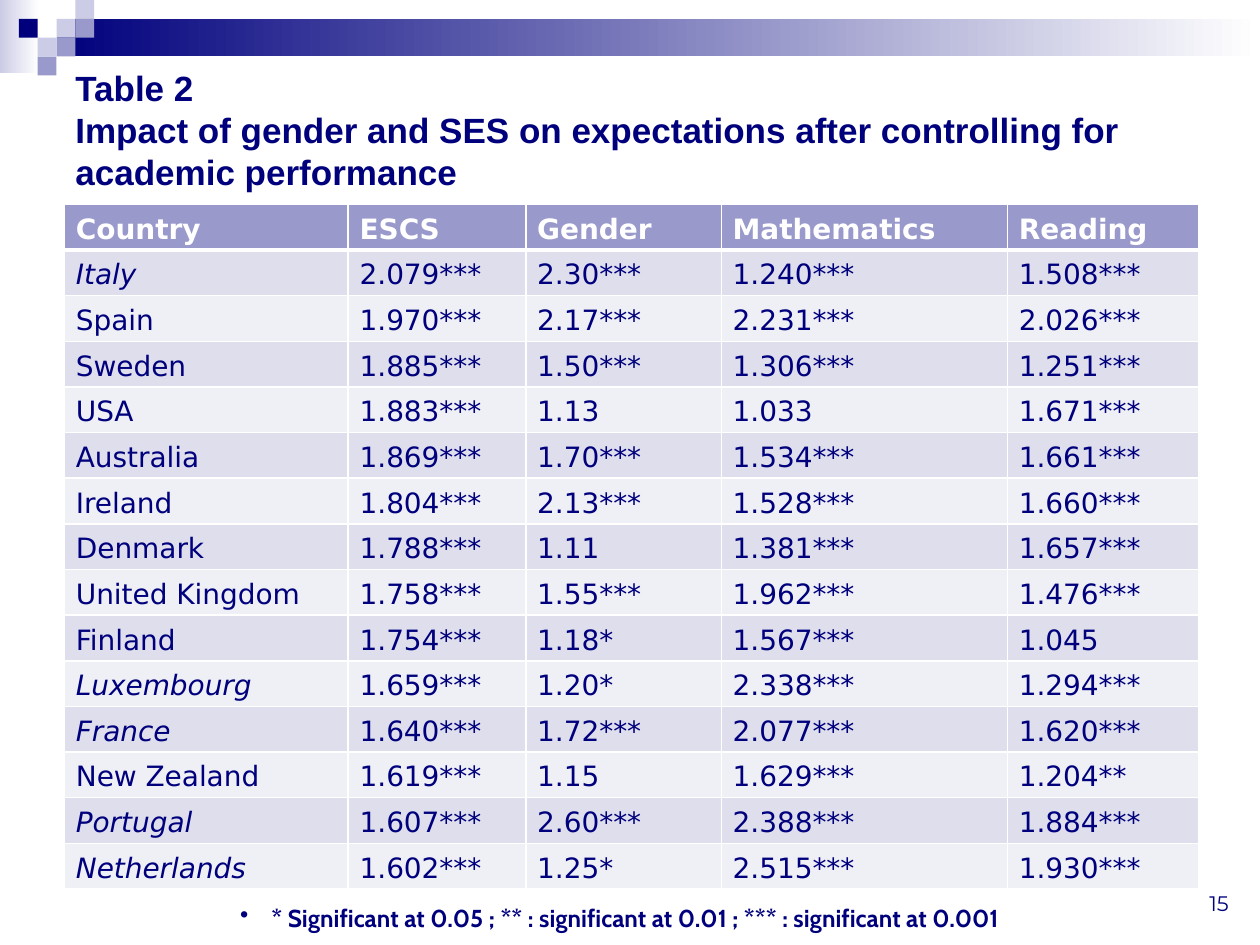
from dataclasses import dataclass
from lxml import etree
from pptx import Presentation
from pptx import util as u
from pptx.dml.color import RGBColor
from pptx.enum import shapes, text
from pptx.oxml.ns import qn

TITLE = "Table 2\vImpact of gender and SES on expectations after controlling for academic performance"
NOTE = "* Significant at 0.05 ; **\u00a0: significant at 0.01\u00a0; ***\u00a0: significant at 0.001".replace("\u00a0", " ")
PAGE = "15"
HEAD = ("Country", "ESCS", "Gender", "Mathematics", "Reading")
ROWS = [
    ("Italy", "2.079***", "2.30***", "1.240***", "1.508***"),
    ("Spain", "1.970***", "2.17***", "2.231***", "2.026***"),
    ("Sweden", "1.885***", "1.50***", "1.306***", "1.251***"),
    ("USA", "1.883***", "1.13", "1.033", "1.671***"),
    ("Australia", "1.869***", "1.70***", "1.534***", "1.661***"),
    ("Ireland", "1.804***", "2.13***", "1.528***", "1.660***"),
    ("Denmark", "1.788***", "1.11", "1.381***", "1.657***"),
    ("United Kingdom", "1.758***", "1.55***", "1.962***", "1.476***"),
    ("Finland", "1.754***", "1.18*", "1.567***", "1.045"),
    ("Luxembourg", "1.659***", "1.20*", "2.338***", "1.294***"),
    ("France", "1.640***", "1.72***", "2.077***", "1.620***"),
    ("New Zealand", "1.619***", "1.15", "1.629***", "1.204**"),
    ("Portugal", "1.607***", "2.60***", "2.388***", "1.884***"),
    ("Netherlands", "1.602***", "1.25*", "2.515***", "1.930***"),
]
ITALIC = {"Italy", "Luxembourg", "France", "Portugal", "Netherlands"}
WIDTHS = (5.72, 3.58, 3.94, 5.77, 3.86)
ROW = 0.92
STEP = 0.38


@dataclass(frozen=True)
class Theme:
    navy: str = "00007D"
    mid: str = "9999CC"
    pale: str = "CCCCE6"
    white: str = "FFFFFF"
    bands: tuple = ("DEDEEC", "EFEFF6")
    title: tuple = ("Arial", 20)
    body: tuple = ("DejaVu Sans", 16)
    note: tuple = ("Cabin", 14)
    page: tuple = ("Montserrat", 12)


T = Theme()
BARS = [
    ((0, 0, 0.79, 1.47), (T.pale, T.white)),
    ((1.14, STEP, 24.26, 0.76), (T.navy, T.white)),
]
TILES = [
    (3, 1, T.pale), (4, 0, T.pale), (4, 1, T.mid), (2, 2, T.pale),
    (1, 1, T.navy), (3, 2, T.mid), (2, 3, T.mid),
]


def rgb(code):
    return RGBColor.from_string(code)


def write(frame, words, face, color=T.navy, bold=False, italic=False,
          align=text.PP_ALIGN.LEFT, lead=None, after=None):
    para = frame.paragraphs[0]
    para.text = words
    para.alignment = align
    if lead:
        para.line_spacing = lead
    if after:
        para.space_after = u.Pt(after)
    for run in para.runs:
        font = run.font
        font.name, font.size = face[0], u.Pt(face[1])
        font.bold, font.italic = bold, italic
        font.color.rgb = rgb(color)
    return para


def box(slide, area, words, face, anchor=text.MSO_ANCHOR.TOP, **form):
    frame = slide.shapes.add_textbox(*map(u.Cm, area)).text_frame
    frame.word_wrap = True
    frame.vertical_anchor = anchor
    return write(frame, words, face, **form)


def block(slide, area, *colors):
    shape = slide.shapes.add_shape(shapes.MSO_SHAPE.RECTANGLE, *map(u.Cm, area))
    shape.shadow.inherit = False
    shape.line.fill.background()
    if len(colors) == 1:
        shape.fill.solid()
        shape.fill.fore_color.rgb = rgb(colors[0])
        return
    shape.fill.gradient()
    shape.fill.gradient_angle = 0
    for stop, color, pos in zip(shape.fill.gradient_stops, colors, (0, 1)):
        stop.color.rgb = rgb(color)
        stop.position = pos


def edge(cell, **sides):
    props = cell._tc.get_or_add_tcPr()
    for side, width in sides.items():
        line = etree.SubElement(props, qn(f"a:ln{side}"), w=str(u.Pt(width)))
        fill = etree.SubElement(line, qn("a:solidFill"))
        etree.SubElement(fill, qn("a:srgbClr"), val=T.white)


def grid(slide):
    data = [HEAD] + ROWS
    area = (1.3, 4.12, sum(WIDTHS), ROW * len(data))
    table = slide.shapes.add_table(len(data), len(HEAD), *map(u.Cm, area)).table
    for col, width in zip(table.columns, WIDTHS):
        col.width = u.Cm(width)
    for i, line in enumerate(data):
        table.rows[i].height = u.Cm(ROW)
        top = i == 0
        for j, words in enumerate(line):
            cell = table.cell(i, j)
            edge(cell, L=1, R=1, T=3 if i == 1 else 1, B=3 if top else 1)
            cell.fill.solid()
            cell.fill.fore_color.rgb = rgb(T.mid if top else T.bands[(i - 1) % 2])
            cell.margin_left = cell.margin_right = u.Cm(0.23)
            cell.margin_top = cell.margin_bottom = 0
            cell.vertical_anchor = text.MSO_ANCHOR.MIDDLE
            write(cell.text_frame, words, T.body, color=T.white if top else T.navy,
                  bold=top, italic=words in ITALIC, lead=1.15, after=10)


def bullet(para, indent):
    props = para._p.get_or_add_pPr()
    props.set("marL", str(u.Cm(indent)))
    props.set("indent", str(-u.Cm(indent)))
    etree.SubElement(props, qn("a:buChar"), char="•")


def main():
    deck = Presentation()
    deck.slide_width, deck.slide_height = u.Cm(25.4), u.Cm(19.05)
    slide = deck.slides.add_slide(deck.slide_layouts[6])
    for area, colors in BARS:
        block(slide, area, *colors)
    for col, row, color in TILES:
        block(slide, (col * STEP, row * STEP, STEP, STEP), color)
    box(slide, (1.27, 1.27, 22.86, 2.67), TITLE, T.title,
        anchor=text.MSO_ANCHOR.MIDDLE, bold=True, lead=u.Pt(24))
    grid(slide)
    note = box(slide, (2.69, 18.08, 19.61, 1.45), NOTE, T.note,
               bold=True, align=text.PP_ALIGN.CENTER)
    bullet(note, 0.63)
    box(slide, (19.1, 17.32, 5.92, 1.27), PAGE, T.page,
        anchor=text.MSO_ANCHOR.BOTTOM, align=text.PP_ALIGN.RIGHT)
    deck.save("out.pptx")


if __name__ == "__main__":
    main()
